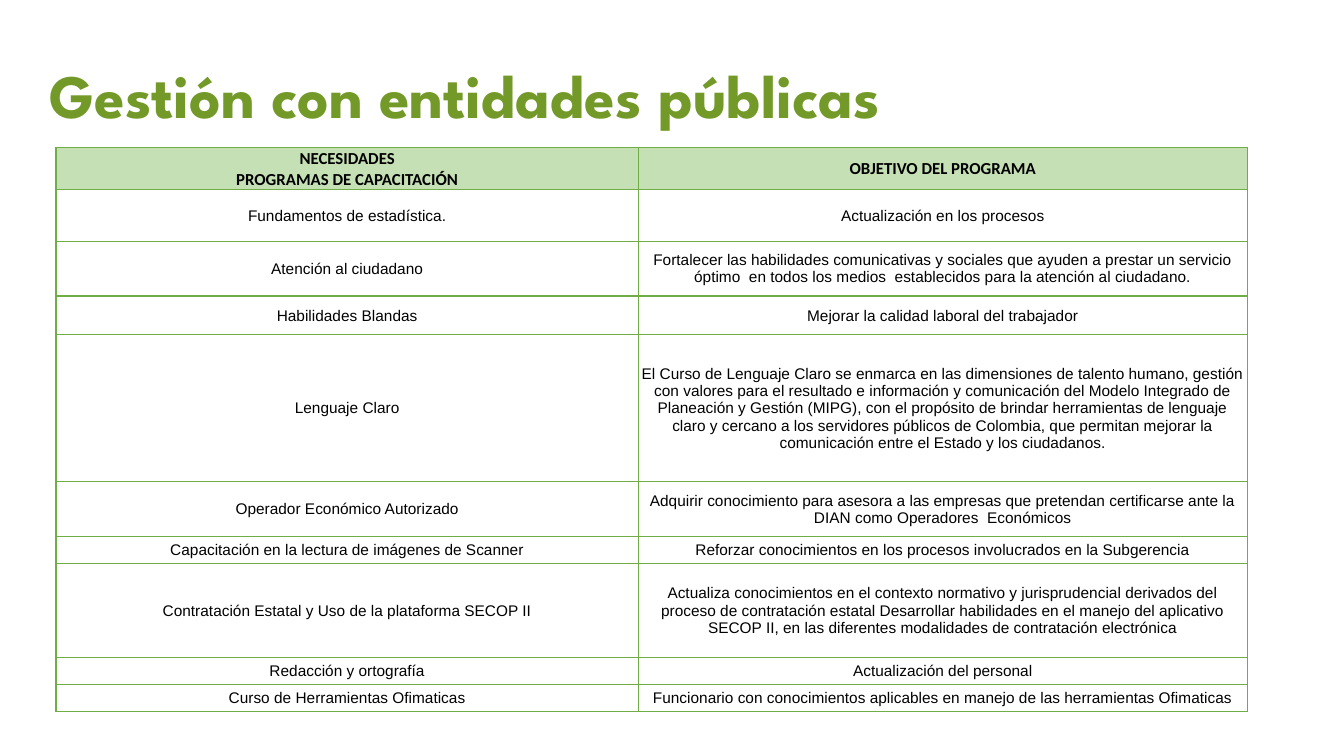
import pptx
import pptx.dml.color
import pptx.enum.text
import pptx.oxml
import pptx.oxml.ns
import pptx.util
from pptx.util import Cm

RGBColor = pptx.dml.color.RGBColor
TITLE_GREEN = RGBColor(0x73, 0x9A, 0x28)
HEADER_GREEN = RGBColor(0xC5, 0xE0, 0xB4)
BORDER_GREEN = RGBColor(0x70, 0xAD, 0x47)
BLACK = RGBColor(0, 0, 0)

MIDDLE = pptx.enum.text.MSO_ANCHOR.MIDDLE
CENTER = pptx.enum.text.PP_ALIGN.CENTER

TITLE_FORMAT = {"name": "League Spartan", "size": pptx.util.Pt(44), "bold": True}
HEADER_FORMAT = {"name": "Calibri", "size": pptx.util.Pt(12), "bold": True}
BODY_FORMAT = {"name": "Arial", "size": pptx.util.Pt(11), "bold": False}
CELL_FORMAT = {
    "vertical_anchor": MIDDLE,
    "margin_left": Cm(0.02),
    "margin_right": Cm(0.02),
    "margin_top": Cm(0.02),
    "margin_bottom": Cm(0),
}

COLUMN_WIDTHS = [14.68, 15.34]
# Each row: height in centimetres, training need, programme objective
PROGRAMS = [
    (1.06, "NECESIDADES\nPROGRAMAS DE CAPACITACIÓN", "OBJETIVO DEL PROGRAMA"),
    (1.3, "Fundamentos de estadística.", "Actualización en los procesos"),
    (1.38, "Atención al ciudadano",
     "Fortalecer las habilidades comunicativas y sociales que ayuden a prestar un "
     "servicio óptimo  en todos los medios  establecidos para la atención al ciudadano."),
    (0.97, "Habilidades Blandas", "Mejorar la calidad laboral del trabajador"),
    (3.71, "Lenguaje Claro",
     "El Curso de Lenguaje Claro se enmarca en las dimensiones de talento humano, "
     "gestión con valores para el resultado e información y comunicación del Modelo "
     "Integrado de Planeación y Gestión (MIPG), con el propósito de brindar "
     "herramientas de lenguaje claro y cercano a los servidores públicos de Colombia, "
     "que permitan mejorar la comunicación entre el Estado y los ciudadanos."),
    (1.37, "Operador Económico Autorizado",
     "Adquirir conocimiento para asesora a las empresas que pretendan certificarse "
     "ante la DIAN como Operadores  Económicos"),
    (0.69, "Capacitación en la lectura de imágenes de Scanner",
     "Reforzar conocimientos en los procesos involucrados en la Subgerencia"),
    (2.36, "Contratación Estatal y Uso de la plataforma SECOP II",
     "Actualiza conocimientos en el contexto normativo y jurisprudencial derivados del "
     "proceso de contratación estatal Desarrollar habilidades en el manejo del "
     "aplicativo SECOP II, en las diferentes modalidades de contratación electrónica"),
    (0.69, "Redacción y ortografía", "Actualización del personal"),
    (0.69, "Curso de Herramientas Ofimaticas",
     "Funcionario con conocimientos aplicables en manejo de las herramientas Ofimaticas"),
]


def apply_format(target, values):
    for name, value in values.items():
        setattr(target, name, value)


def write_text(frame, text, font_format, color, align=None):
    """Fill a text frame, one paragraph for each line of the text."""
    frame.text = text
    for para in frame.paragraphs:
        para.alignment = align
        for span in para.runs:
            apply_format(span.font, font_format)
            span.font.color.rgb = color


def add_borders(cell):
    properties = cell._tc.get_or_add_tcPr()
    for side in ("lnL", "lnR", "lnT", "lnB"):
        properties.append(pptx.oxml.parse_xml(
            f'<a:{side} {pptx.oxml.ns.nsdecls("a")} w="12700"><a:solidFill>'
            f'<a:srgbClr val="{BORDER_GREEN}"/></a:solidFill></a:{side}>'))


def add_title(page, text):
    box = page.shapes.add_textbox(Cm(0.99), Cm(0.89), Cm(27.25), Cm(3.2))
    frame = box.text_frame
    apply_format(frame, {"word_wrap": True, "vertical_anchor": MIDDLE})
    write_text(frame, text, TITLE_FORMAT, TITLE_GREEN)
    frame.paragraphs[0].line_spacing = 0.9


def fill_cell(cell, text, is_header):
    apply_format(cell, CELL_FORMAT)
    add_borders(cell)
    if is_header:
        cell.fill.solid()
        cell.fill.fore_color.rgb = HEADER_GREEN
    else:
        cell.fill.background()
    font_format = HEADER_FORMAT if is_header else BODY_FORMAT
    write_text(cell.text_frame, text, font_format, BLACK, CENTER)


def add_program_table(page):
    height = sum(program[0] for program in PROGRAMS)
    table = page.shapes.add_table(
        len(PROGRAMS), len(COLUMN_WIDTHS),
        Cm(1.41), Cm(3.72), Cm(sum(COLUMN_WIDTHS)), Cm(height)).table
    table.horz_banding = False
    for column, width in zip(table.columns, COLUMN_WIDTHS):
        column.width = Cm(width)
    for index, (row_height, *texts) in enumerate(PROGRAMS):
        table.rows[index].height = Cm(row_height)
        for cell, text in zip(table.rows[index].cells, texts):
            fill_cell(cell, text, is_header=index == 0)


def main():
    deck = pptx.Presentation()
    deck.slide_width, deck.slide_height = Cm(33.87), Cm(19.05)
    page = deck.slides.add_slide(deck.slide_layouts[6])
    add_title(page, "Gestión con entidades públicas")
    add_program_table(page)
    deck.save("out.pptx")


if __name__ == "__main__":
    main()
